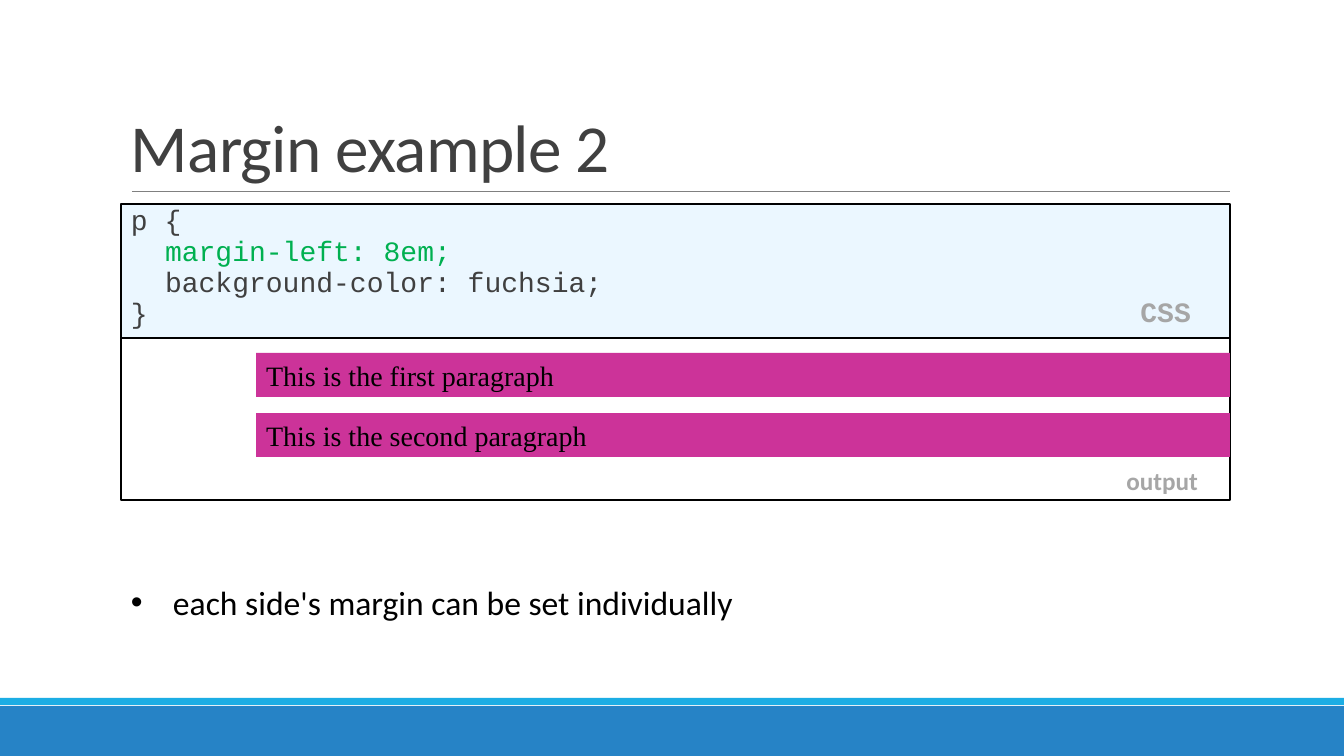
"""Build the slide "Margin example 2" about CSS margins."""
import lxml.etree
import pptx
import pptx.dml.color
import pptx.enum.shapes
import pptx.enum.text
import pptx.oxml.ns
import pptx.util

EMU_PER_PX = 914400 / 100.8
COLORS = {
    "band": "2683C6",
    "accent": "1CADE4",
    "rule": "808080",
    "text": "404040",
    "code": "EBF7FF",
    "margin": "00B050",
    "label": "A6A6A6",
    "fuchsia": "CC3399",
    "black": "000000",
}
ALIGN = pptx.enum.text.PP_ALIGN
ANCHOR = pptx.enum.text.MSO_ANCHOR


def px(length):
    """Turn a length in px into EMU."""
    return pptx.util.Emu(round(length * EMU_PER_PX))


def rgb(name):
    """Look up a named colour."""
    return pptx.dml.color.RGBColor.from_string(COLORS[name])


def place(shape, left, top, width, height):
    """Move and size a shape in px."""
    shape.left, shape.top = px(left), px(top)
    shape.width, shape.height = px(width), px(height)


def paint(shape, fill=None, line=None):
    """Set the fill and the outline of a shape."""
    if fill:
        shape.fill.solid()
        shape.fill.fore_color.rgb = rgb(fill)
    else:
        shape.fill.background()
    if line:
        shape.line.color.rgb = rgb(line)
        shape.line.width = pptx.util.Pt(1.5)
    else:
        shape.line.fill.background()


def setup_frame(frame, anchor, inset_x=10, inset_y=5):
    """Set wrapping, anchor and insets of a text frame."""
    frame.word_wrap = True
    frame.auto_size = pptx.enum.text.MSO_AUTO_SIZE.NONE
    frame.vertical_anchor = anchor
    frame.margin_left = frame.margin_right = px(inset_x)
    frame.margin_top = frame.margin_bottom = px(inset_y)


def write(paragraph, text, font="Calibri", size=18, color="black", bold=False,
          align=ALIGN.LEFT, spacing=1.0, before=0, after=0, kerning=None):
    """Write one formatted run and set its paragraph spacing."""
    paragraph.alignment = align
    paragraph.line_spacing = spacing
    paragraph.space_before = pptx.util.Pt(before)
    paragraph.space_after = pptx.util.Pt(after)
    run = paragraph.add_run()
    run.text = text
    run.font.name = font
    run.font.size = pptx.util.Pt(size)
    run.font.bold = bold
    run.font.color.rgb = rgb(color)
    if kerning is not None:
        run.font._element.set("spc", str(kerning))


def indent(paragraph, left, bullet=None):
    """Indent a paragraph, hanging it behind a bullet if there is one."""
    properties = paragraph._p.get_or_add_pPr()
    properties.set("marL", str(px(left)))
    properties.set("indent", str(px(-left if bullet else 0)))
    tag = "a:buChar" if bullet else "a:buNone"
    mark = lxml.etree.SubElement(properties, pptx.oxml.ns.qn(tag))
    if bullet:
        mark.set("char", bullet)


def add_box(slide, left, top, width, height, fill=None, line=None):
    """Add a flat rectangle."""
    box = slide.shapes.add_shape(pptx.enum.shapes.MSO_SHAPE.RECTANGLE,
                                 px(left), px(top), px(width), px(height))
    box.shadow.inherit = False
    paint(box, fill, line)
    return box


def add_rule(slide, left, right, y):
    """Add the thin rule below the title."""
    rule = slide.shapes.add_connector(pptx.enum.shapes.MSO_CONNECTOR.STRAIGHT,
                                      px(left), px(y), px(right), px(y))
    rule.line.color.rgb = rgb("rule")
    rule.line.width = pptx.util.Pt(0.5)
    lxml.etree.SubElement(rule._element.spPr, pptx.oxml.ns.qn("a:effectLst"))


def add_label(slide, text, right, top, **text_format):
    """Add a grey label that ends at the given right edge."""
    label = slide.shapes.add_textbox(px(right - 100), px(top), px(100), px(28))
    setup_frame(label.text_frame, ANCHOR.MIDDLE, 0, 0)
    write(label.text_frame.paragraphs[0], text, color="label", bold=True,
          align=ALIGN.RIGHT, **text_format)


def fill_title(title, text):
    """Place and write the title."""
    place(title, 121, 31, 1109, 160)
    setup_frame(title.text_frame, ANCHOR.BOTTOM)
    write(title.text_frame.paragraphs[0], text, size=48, color="text",
          spacing=0.85, kerning=-50)


def fill_code(panel, lines):
    """Write code lines, given as text, indent level and colour."""
    place(panel, 121, 204, 1109, 134)
    paint(panel, "code", "black")
    frame = panel.text_frame
    setup_frame(frame, ANCHOR.TOP, 0)
    for number, (text, level, color) in enumerate(lines):
        paragraph = frame.add_paragraph() if number else frame.paragraphs[0]
        write(paragraph, text, font="Courier New", size=20, color=color,
              spacing=0.8, before=1, after=2)
        indent(paragraph, 10 + 34 * level)


def fill_notes(body, text):
    """Place and write the bullet below the example."""
    place(body, 121, 577, 1109, 50)
    setup_frame(body.text_frame, ANCHOR.TOP)
    paragraph = body.text_frame.paragraphs[0]
    write(paragraph, text, size=24)
    indent(paragraph, 42, "•")


def main():
    """Build and save the slide."""
    deck = pptx.Presentation()
    deck.slide_width, deck.slide_height = px(1344), px(756)
    slide = deck.slides.add_slide(deck.slide_layouts[3])
    title, code, notes = slide.placeholders

    add_box(slide, 0, 706, 1344, 50, "band")
    add_box(slide, 0, 698, 1344, 7, "accent")
    add_rule(slide, 132, 1230, 191)
    fill_title(title, "Margin example 2")
    fill_code(code, [
        ("p {", 0, "text"),
        ("margin-left: 8em;", 1, "margin"),
        ("background-color: fuchsia;", 1, "text"),
        ("}", 0, "text"),
    ])
    add_label(slide, "CSS", 1191, 297, font="Courier New", size=20)

    add_box(slide, 121, 338, 1109, 162, line="black")
    for row, ordinal in enumerate(["first", "second"]):
        bar = add_box(slide, 256, 353 + 60 * row, 974, 44, "fuchsia")
        setup_frame(bar.text_frame, ANCHOR.MIDDLE)
        write(bar.text_frame.paragraphs[0], f"This is the {ordinal} paragraph",
              font="Times New Roman", size=20)
    add_label(slide, "output", 1198, 466)
    fill_notes(notes, "each side's margin can be set individually")
    deck.save("out.pptx")


if __name__ == "__main__":
    main()
